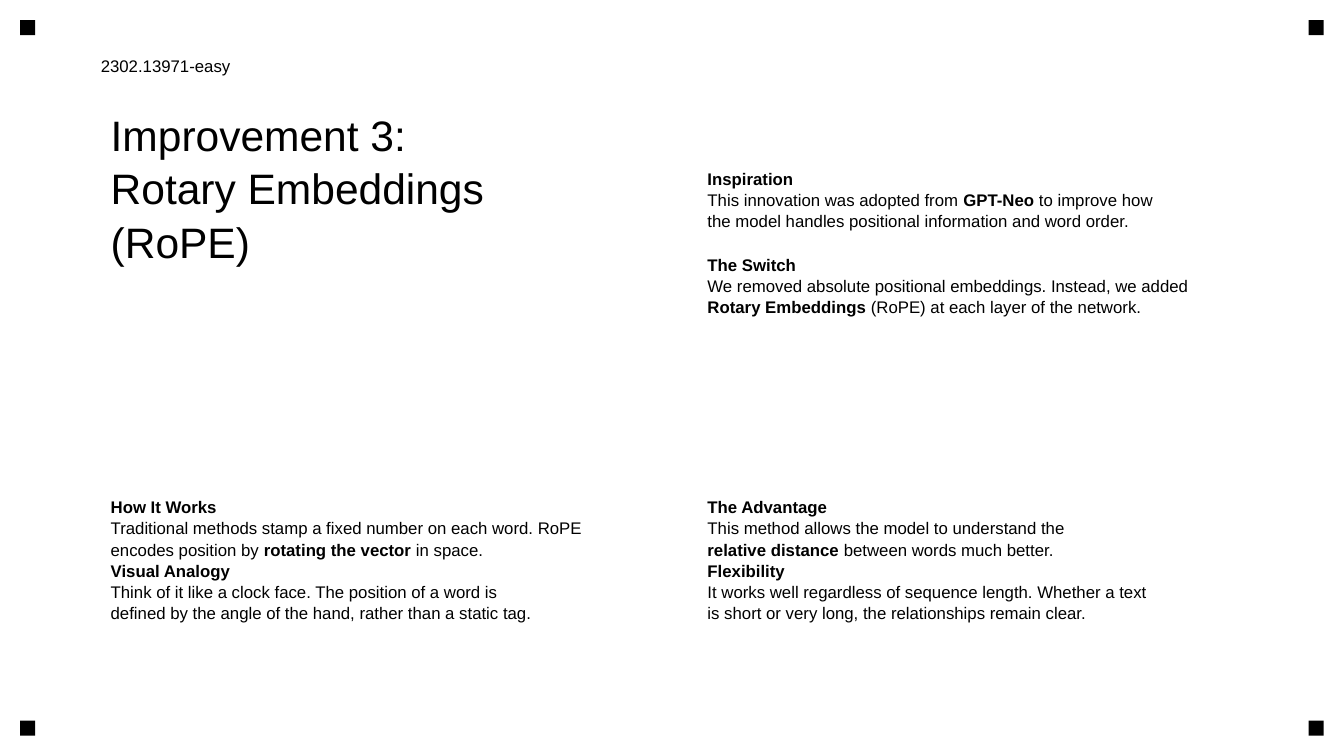
from pptx import Presentation
from pptx.dml.color import RGBColor
from pptx.enum.shapes import MSO_SHAPE
from pptx.enum.text import MSO_ANCHOR, MSO_AUTO_SIZE, PP_ALIGN
from pptx.util import Cm, Pt

SQUARE = MSO_SHAPE.RECTANGLE
TOP, MIDDLE = MSO_ANCHOR.TOP, MSO_ANCHOR.MIDDLE
LEFT = PP_ALIGN.LEFT
NO_AUTOFIT = MSO_AUTO_SIZE.NONE
TITLE_ONLY = 5

# Lengths in centimetres
SLIDE_W, SLIDE_H = 33.87, 19.05
MARK_SIZE, MARK_MARGIN = 0.38, 0.51
COLUMNS, ROWS = (2.54, 17.58), (2.54, 10.54)
CELL_W, CELL_H = 13.77, 7.24
CELL_INSETS = (0.25, 0.13, 0.13, 0.25)


def color(value):
    return RGBColor.from_string(value)


class Deck:
    font, ink, paper = "Arial", "000000", "FFFFFF"
    title_size, body_size = 30.4, 12
    line_spacing, section_gap = 1.05, 16

    def __init__(self):
        self.prs = Presentation()
        self.prs.slide_width, self.prs.slide_height = Cm(SLIDE_W), Cm(SLIDE_H)
        self.slide = None

    def add_slide(self):
        self.slide = self.prs.slides.add_slide(self.prs.slide_layouts[TITLE_ONLY])
        background = self.slide.background.fill
        background.solid()
        background.fore_color.rgb = color(self.paper)

    def mark(self, x, y):
        square = self.slide.shapes.add_shape(
            SQUARE, Cm(x), Cm(y), Cm(MARK_SIZE), Cm(MARK_SIZE))
        square.shadow.inherit = False
        square.fill.solid()
        square.fill.fore_color.rgb = color(self.ink)
        square.line.fill.background()

    def frame(self, shape, insets, anchor):
        frame = shape.text_frame
        frame.word_wrap = True
        frame.auto_size = NO_AUTOFIT
        frame.vertical_anchor = anchor
        (frame.margin_left, frame.margin_top,
         frame.margin_right, frame.margin_bottom) = map(Cm, insets)
        return frame

    def style(self, paragraph, size):
        paragraph.alignment = LEFT
        paragraph.line_spacing = self.line_spacing
        paragraph.space_before = paragraph.space_after = Pt(0)
        for run in paragraph.runs:
            run.font.name = self.font
            run.font.size = Pt(size)
            run.font.color.rgb = color(self.ink)

    def title(self, text, x, y):
        title = self.slide.shapes.title
        title.left, title.top = Cm(x), Cm(y)
        title.width, title.height = Cm(CELL_W), Cm(CELL_H)
        frame = self.frame(title, CELL_INSETS, TOP)
        frame.text = text
        for paragraph in frame.paragraphs:
            self.style(paragraph, self.title_size)

    def label(self, text, x, y, w, h):
        box = self.slide.shapes.add_textbox(Cm(x), Cm(y), Cm(w), Cm(h))
        frame = self.frame(box, (0, 0, 0, 0), MIDDLE)
        frame.text = text
        self.style(frame.paragraphs[0], self.body_size)

    def sections(self, lines, x, y, gap_after=None):
        """Lines of text; ** encloses bold parts."""
        box = self.slide.shapes.add_textbox(Cm(x), Cm(y), Cm(CELL_W), Cm(CELL_H))
        frame = self.frame(box, CELL_INSETS, MIDDLE)
        for number, line in enumerate(lines):
            paragraph = frame.add_paragraph() if number else frame.paragraphs[0]
            for part, text in enumerate(line.split("**")):
                if text:
                    run = paragraph.add_run()
                    run.text = text
                    run.font.bold = part % 2 == 1
            self.style(paragraph, self.body_size)
            if number == gap_after:
                paragraph.space_after = Pt(self.section_gap)


def main():
    deck = Deck()
    deck.add_slide()
    left, right = COLUMNS
    upper, lower = ROWS

    # Corner marks
    far = MARK_MARGIN + MARK_SIZE
    for y in (MARK_MARGIN, SLIDE_H - far):
        for x in (MARK_MARGIN, SLIDE_W - far):
            deck.mark(x, y)

    # Title and paper number
    deck.title("Improvement 3:\nRotary Embeddings\n(RoPE)", left, upper)
    deck.label("2302.13971-easy", left, 1.02, 15.24, 1.27)

    # Text quadrants
    deck.sections([
        "**Inspiration**",
        "This innovation was adopted from **GPT-Neo** to improve how",
        "the model handles positional information and word order.",
        "**The Switch**",
        "We removed absolute positional embeddings. Instead, we added",
        "**Rotary Embeddings** (RoPE) at each layer of the network.",
    ], right, upper, gap_after=2)
    deck.sections([
        "**How It Works**",
        "Traditional methods stamp a fixed number on each word. RoPE",
        "encodes position by **rotating the vector** in space.",
        "**Visual Analogy**",
        "Think of it like a clock face. The position of a word is",
        "defined by the angle of the hand, rather than a static tag.",
    ], left, lower)
    deck.sections([
        "**The Advantage**",
        "This method allows the model to understand the",
        "**relative distance** between words much better.",
        "**Flexibility**",
        "It works well regardless of sequence length. Whether a text",
        "is short or very long, the relationships remain clear.",
    ], right, lower)

    deck.prs.save("out.pptx")


if __name__ == "__main__":
    main()
